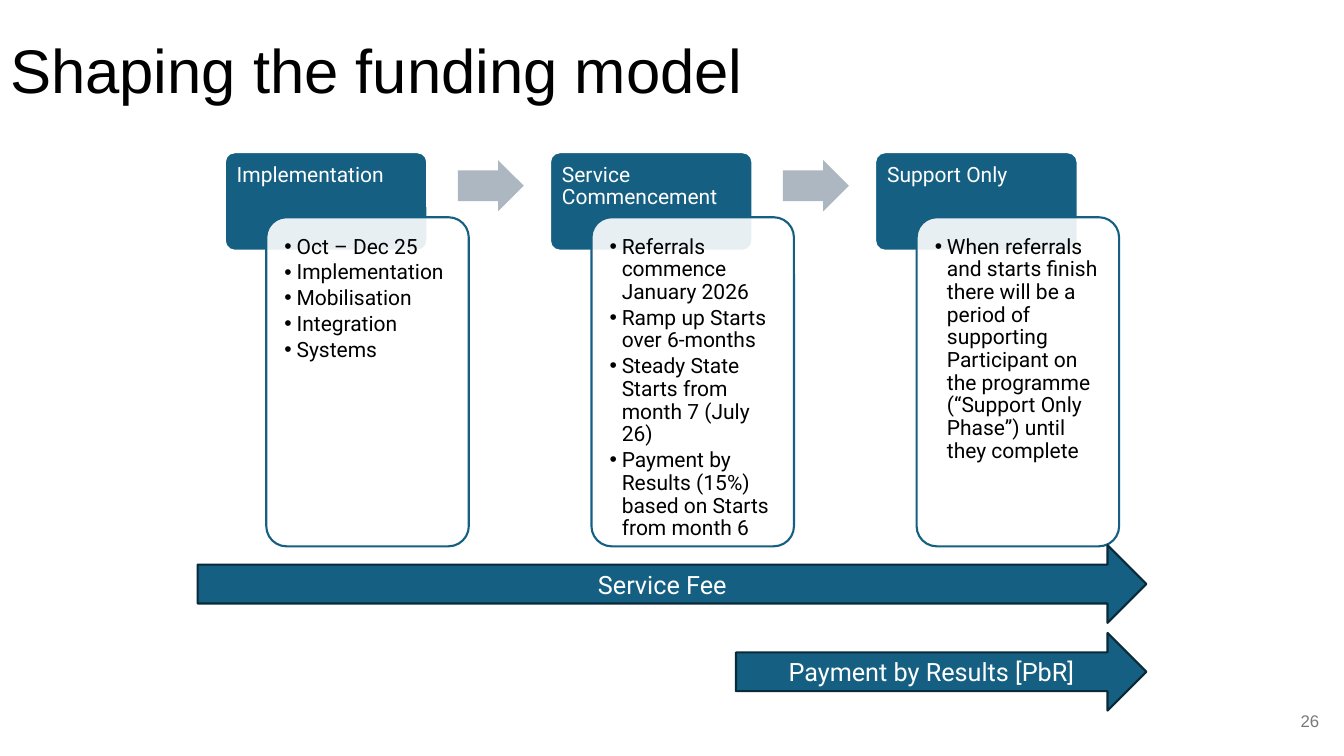
from lxml import etree
from pptx import Presentation
from pptx import util as u
from pptx.dml.color import RGBColor
from pptx.enum import shapes, text
from pptx.oxml import ns

TEAL = RGBColor(0x15, 0x60, 0x82)
DARK_TEAL = RGBColor(0x09, 0x2A, 0x39)
STEEL = RGBColor(0xAC, 0xB7, 0xC1)
GREY = RGBColor(0x79, 0x79, 0x79)
WHITE = RGBColor(0xFF, 0xFF, 0xFF)
BLACK = RGBColor(0, 0, 0)

WIDTH, HEIGHT = 13.33, 7.5
STAGE_LEFT, STAGE_PITCH = 2.23, 3.225
STAGES = [
    ("Implementation",
     ["Oct – Dec 25", "Implementation", "Mobilisation", "Integration", "Systems"]),
    ("Service Commencement",
     ["Referrals commence January 2026",
      "Ramp up Starts over 6-months",
      "Steady State Starts from month 7 (July 26)",
      "Payment by Results (15%) based on Starts from month 6"]),
    ("Support Only",
     ["When referrals and starts finish there will be a period of supporting "
      "Participant on the programme (“Support Only Phase”) until they complete"]),
]
FEES = [("Service Fee", (1.96, 5.41, 9.41, 0.77)),
        ("Payment by Results [PbR]", (7.3, 6.28, 4.07, 0.77))]


def share(box, x, y, w, h):
    """Return the part of a box given by shares of its width and height."""
    left, top, width, height = box
    return left + x * width, top + y * height, w * width, h * height


def place(part, box):
    """Move and size a part to a box in inches."""
    part.left, part.top, part.width, part.height = (u.Inches(v) for v in box)


def bullet(paragraph, indent):
    """Give a paragraph a round bullet with a hanging indent in inches."""
    props = paragraph._p.get_or_add_pPr()
    props.set("marL", str(u.Inches(indent)))
    props.set("indent", str(-u.Inches(indent)))
    etree.SubElement(props, ns.qn("a:buFont")).set("typeface", "Arial")
    etree.SubElement(props, ns.qn("a:buChar")).set("char", "•")


def write(part, lines, size, color, font="Roboto", align=text.PP_ALIGN.LEFT,
          anchor=text.MSO_ANCHOR.TOP, insets=(0.1, 0.05, 0.1, 0.05),
          spacing=1.0, after=0, bullets=False):
    """Fill a part with formatted lines of text."""
    frame = part.text_frame
    frame.word_wrap = True
    frame.auto_size = text.MSO_AUTO_SIZE.NONE
    frame.vertical_anchor = anchor
    (frame.margin_left, frame.margin_top,
     frame.margin_right, frame.margin_bottom) = (u.Inches(v) for v in insets)
    for number, line in enumerate(lines):
        paragraph = frame.add_paragraph() if number else frame.paragraphs[0]
        paragraph.alignment = align
        paragraph.line_spacing = spacing
        paragraph.space_before = u.Pt(0)
        paragraph.space_after = u.Pt(after)
        if bullets:
            bullet(paragraph, 0.12)
        run = paragraph.add_run()
        run.text = line
        run.font.name = font
        run.font.size = u.Pt(size)
        run.font.bold = False
        run.font.color.rgb = color


def draw(slide, kind, box, fill, line=None, adjustments=(), opacity=None):
    """Add a preset shape with a flat fill and an optional outline."""
    part = slide.shapes.add_shape(kind, *(u.Inches(v) for v in box))
    part.shadow.inherit = False
    for number, value in enumerate(adjustments):
        part.adjustments[number] = value
    part.fill.solid()
    part.fill.fore_color.rgb = fill
    if opacity is not None:
        tint = part.fill._xPr.find(ns.qn("a:solidFill"))[0]
        etree.SubElement(tint, ns.qn("a:alpha")).set("val", str(opacity * 1000))
    if line is None:
        part.line.fill.background()
    else:
        part.line.color.rgb = line
        part.line.width = u.Pt(1.5)
    return part


def add_title(slide, box):
    """Place the slide title."""
    place(slide.shapes.title, box)
    write(slide.shapes.title, ["Shaping the funding model"], 44, BLACK,
          font="Arial", anchor=text.MSO_ANCHOR.MIDDLE, spacing=0.9)


def add_stage(slide, box, heading, points, body):
    """Draw one stage: its heading and an overlapping card with a list."""
    rounded = shapes.MSO_SHAPE.ROUNDED_RECTANGLE
    header = draw(slide, rounded, share(box, 0, 0, 0.83, 0.25), TEAL, WHITE, [0.1])
    write(header, [heading], 15, WHITE, insets=(0.09, 0.09, 0.09, 0.06), spacing=0.9)
    card = share(box, 0.17, 0.165, 0.83, 0.835)
    draw(slide, rounded, card, WHITE, TEAL, [0.1], opacity=90)
    place(body, share(card, 0.03, 0.02, 0.94, 0.96))
    slide.shapes.element.append(body.element)
    write(body, points, 15, BLACK, insets=(0.12,) * 4, spacing=0.9,
          after=2.25, bullets=True)


def add_stages(slide, box):
    """Draw the row of stages with an arrow between neighbours."""
    left, top, width, height = box
    bodies = [p for p in slide.placeholders if p.placeholder_format.idx in range(1, 5)]
    for number, (heading, points) in enumerate(STAGES):
        stage = (left + number * STAGE_PITCH, top, width, height)
        add_stage(slide, stage, heading, points, bodies[number])
        if number < len(STAGES) - 1:
            draw(slide, shapes.MSO_SHAPE.RIGHT_ARROW,
                 share(stage, 0.955, 0.02, 0.27, 0.13), STEEL, adjustments=[0.6, 0.5])
    for spare in bodies[len(STAGES):]:
        slide.shapes.element.remove(spare.element)


def add_fee(slide, box, label):
    """Draw a labelled arrow for one payment stream."""
    fee = draw(slide, shapes.MSO_SHAPE.RIGHT_ARROW, box, TEAL, DARK_TEAL)
    write(fee, [label], 18, WHITE, align=text.PP_ALIGN.CENTER,
          anchor=text.MSO_ANCHOR.MIDDLE)


def add_page_number(slide, box):
    """Place the page number."""
    number = slide.shapes.add_textbox(*(u.Inches(v) for v in box))
    write(number, ["26"], 12, GREY, font="Arial", align=text.PP_ALIGN.RIGHT,
          anchor=text.MSO_ANCHOR.MIDDLE)


def main():
    """Build and save the slide."""
    deck = Presentation()
    deck.slide_width, deck.slide_height = u.Inches(WIDTH), u.Inches(HEIGHT)
    slide = deck.slides.add_slide(deck.slide_layouts.get_by_name("Comparison"))
    page = (0, 0, WIDTH, HEIGHT)
    add_title(slide, share(page, 0, 0, 1, 0.195))
    add_stages(slide, (STAGE_LEFT, 1.51, 2.42, 3.91))
    for label, box in FEES:
        add_fee(slide, box, label)
    add_page_number(slide, share(page, 0.91, 0.927, 0.079, 0.053))
    deck.save("out.pptx")


if __name__ == "__main__":
    main()
